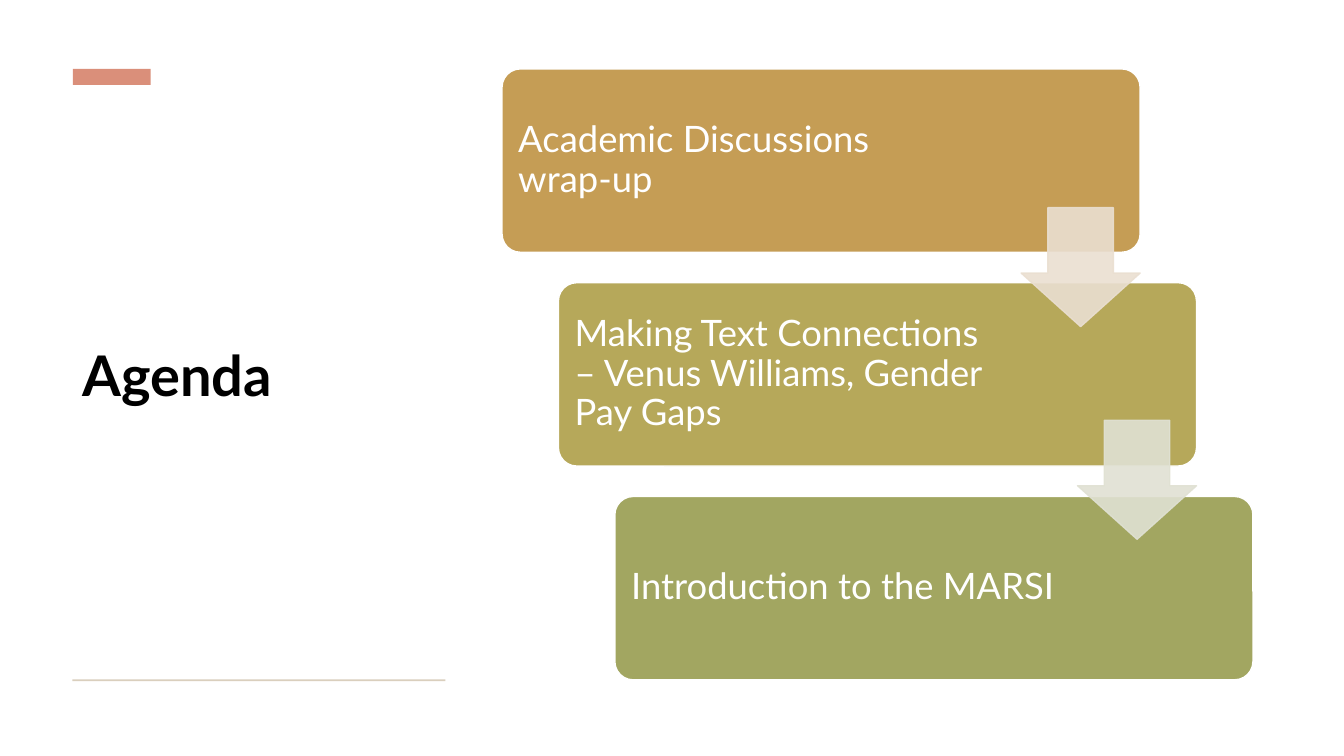
from dataclasses import dataclass

import pptx
import pptx.dml.color
import pptx.enum.shapes
import pptx.enum.text
import pptx.oxml
import pptx.oxml.ns
import pptx.util

Pt = pptx.util.Pt
Shapes = pptx.enum.shapes.MSO_SHAPE


@dataclass(frozen=True)
class Theme:
    font: str = "Lato"
    title_size: float = 40
    step_size: float = 26
    black: str = "000000"
    white: str = "FFFFFF"
    accent: str = "DA8F7A"
    rule: str = "DACFBD"


@dataclass(frozen=True)
class Frame:
    left: float
    top: float
    width: float
    height: float

    def shifted(self, index: int, across: float, down: float) -> "Frame":
        return Frame(self.left + index * across, self.top + index * down, self.width, self.height)


@dataclass(frozen=True)
class Step:
    text: str
    fill: str
    text_width: float
    arrow_fill: str = ""  # the last step has no arrow


THEME = Theme()
STEPS = [
    Step("Academic Discussions wrap-up", "C59D55", 314.6, "EADFD1"),
    Step("Making Text Connections – Venus Williams, Gender Pay Gaps", "B6A85A", 323.3, "E0E1D3"),
    Step("Introduction to the MARSI", "A2A661", 323.3),
]
FIRST_BOX = Frame(358.6, 49.2, 455.8, 131)
FIRST_ARROW = Frame(729.4, 148.3, 85, 85)
STEP_ACROSS = 40.3
BOX_DOWN = 152.7
ARROW_DOWN = 151.9
TEXT_OFFSET = 3.8


def rgb(color: str) -> pptx.dml.color.RGBColor:
    return pptx.dml.color.RGBColor.from_string(color)


def set_opacity(fill, percent: int) -> None:
    color = fill._xPr.find(pptx.oxml.ns.qn("a:solidFill"))[0]
    namespace = pptx.oxml.ns.nsdecls("a")
    color.append(pptx.oxml.parse_xml(f'<a:alpha {namespace} val="{percent * 1000}"/>'))


def add_block(slide, kind, frame: Frame, fill: str, line: str = "",
              adjustments: tuple = (), opacity: int = 100) -> None:
    block = slide.shapes.add_shape(
        kind, Pt(frame.left), Pt(frame.top), Pt(frame.width), Pt(frame.height))
    block.shadow.inherit = False
    for index, value in enumerate(adjustments):
        block.adjustments[index] = value
    block.fill.solid()
    block.fill.fore_color.rgb = rgb(fill)
    if line:
        block.line.width = Pt(1)
        block.line.fill.solid()
        block.line.color.rgb = rgb(line)
    else:
        block.line.fill.background()
    if opacity < 100:
        set_opacity(block.fill, opacity)
        set_opacity(block.line.fill, opacity)


def add_text(slide, frame: Frame, text: str, size: float, color: str,
             bold: bool, inset_x: float, inset_y: float) -> None:
    box = slide.shapes.add_textbox(
        Pt(frame.left), Pt(frame.top), Pt(frame.width), Pt(frame.height))
    text_frame = box.text_frame
    text_frame.word_wrap = True
    text_frame.vertical_anchor = pptx.enum.text.MSO_ANCHOR.MIDDLE
    text_frame.margin_left = text_frame.margin_right = Pt(inset_x)
    text_frame.margin_top = text_frame.margin_bottom = Pt(inset_y)
    text_frame.text = text
    para = text_frame.paragraphs[0]
    para.line_spacing = 0.9
    span = para.runs[0]
    span.font.name = THEME.font
    span.font.size = Pt(size)
    span.font.bold = bold
    span.font.color.rgb = rgb(color)


def main() -> None:
    deck = pptx.Presentation()
    deck.slide_width, deck.slide_height = Pt(960), Pt(540)
    page = deck.slides.add_slide(deck.slide_layouts[6])

    # Title column with accent bar and bottom rule
    add_text(page, Frame(51.8, 75.6, 266.4, 389.5), "Agenda",
             THEME.title_size, THEME.black, True, 7.2, 3.6)
    add_block(page, Shapes.RECTANGLE, Frame(52, 49.2, 55.6, 11.5), THEME.accent)
    add_block(page, Shapes.RECTANGLE, Frame(51.8, 485.2, 266.4, 1.4), THEME.rule)

    # Staircase of agenda steps
    for index, step in enumerate(STEPS):
        frame = FIRST_BOX.shifted(index, STEP_ACROSS, BOX_DOWN)
        add_block(page, Shapes.ROUNDED_RECTANGLE, frame, step.fill, THEME.white, (0.1,))
        label = Frame(frame.left + TEXT_OFFSET, frame.top + TEXT_OFFSET,
                      step.text_width, frame.height - 2 * TEXT_OFFSET)
        add_text(page, label, step.text, THEME.step_size, THEME.white, False, 7.8, 7.8)

    # Arrows lie over the boxes they join
    for index, step in enumerate(STEPS):
        if step.arrow_fill:
            add_block(page, Shapes.DOWN_ARROW, FIRST_ARROW.shifted(index, STEP_ACROSS, ARROW_DOWN),
                      step.arrow_fill, step.arrow_fill, (0.55, 0.45), 90)

    deck.save("out.pptx")


if __name__ == "__main__":
    main()
